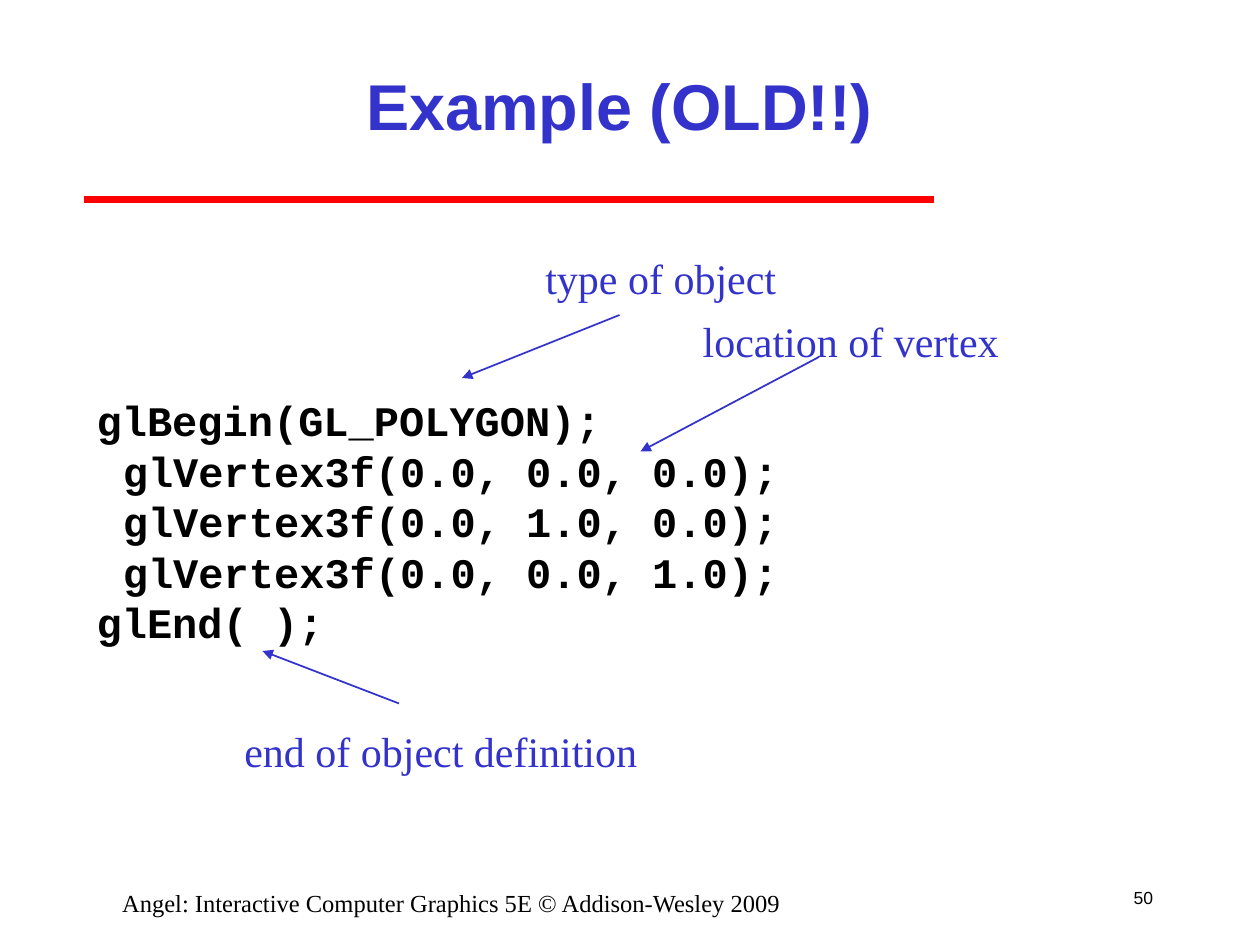
from lxml import etree
from pptx import Presentation
from pptx.dml.color import RGBColor
from pptx.enum import shapes, text
from pptx.oxml import ns
from pptx.util import Pt

COLORS = {"accent": "3333CC", "rule": "FF0000", "ink": "000000"}
CODE = [
    "glBegin(GL_POLYGON);",
    "\tglVertex3f(0.0, 0.0, 0.0);",
    "\tglVertex3f(0.0, 1.0, 0.0);",
    "\tglVertex3f(0.0, 0.0, 1.0);",
    "glEnd( );",
]
CALLOUTS = [
    ("type of object", (256.5, -81, 148, 36), (306, -42), (216, -6)),
    ("location of vertex", (346.5, -45, 185, 36), (420, -18), (318, 36)),
    ("end of object definition", (84.5, 189, 240, 36), (180, 180), (102, 150)),
]


def style(paragraph, face, size, color, bold=False, align=text.PP_ALIGN.LEFT):
    paragraph.alignment = align
    font = paragraph.font
    font.name, font.size, font.bold = face, Pt(size), bold
    font.color.rgb = RGBColor.from_string(COLORS[color])


def place(placeholder, box):
    placeholder.left, placeholder.top, placeholder.width, placeholder.height = map(Pt, box)
    placeholder.text_frame.auto_size = text.MSO_AUTO_SIZE.NONE
    return placeholder.text_frame


def add_label(slide, box, words, face, size, color, align=text.PP_ALIGN.LEFT, wrap=False):
    frame = slide.shapes.add_textbox(*map(Pt, box)).text_frame
    frame.word_wrap = wrap
    frame.text = words
    style(frame.paragraphs[0], face, size, color, align=align)
    return frame


def add_line(slide, start, end, color, width, arrow=False):
    line = slide.shapes.add_connector(shapes.MSO_CONNECTOR.STRAIGHT, *map(Pt, start + end))
    line.line.color.rgb = RGBColor.from_string(COLORS[color])
    line.line.width = Pt(width)
    if arrow:
        etree.SubElement(line.line._get_or_add_ln(), ns.qn("a:tailEnd"), type="triangle")
    etree.SubElement(line._element.spPr, ns.qn("a:effectLst"))


def add_heading(slide, box):
    left, top, width, height = box
    add_line(slide, (left, top + height), (left + 486, top + height), "rule", 4)
    frame = place(slide.shapes.title, (left + 60, top, width - 120, 84))
    frame.vertical_anchor = text.MSO_ANCHOR.MIDDLE
    frame.text = "Example (OLD!!)"
    style(frame.paragraphs[0], "Arial", 37, "accent", True, text.PP_ALIGN.CENTER)


def add_code(slide, box):
    frame = place(slide.placeholders[1], box)
    frame.text = "\n".join(CODE)
    for paragraph in frame.paragraphs:
        properties = paragraph._p.get_or_add_pPr()
        properties.set("marL", str(Pt(15)))
        properties.set("indent", str(-Pt(15)))
        etree.SubElement(properties, ns.qn("a:buNone"))
        paragraph.space_before = Pt(0)
        style(paragraph, "Courier New", 24, "ink", True)


def add_callouts(slide, box):
    left, top = box[:2]
    for words, (x, y, width, height), start, end in CALLOUTS:
        label = add_label(slide, (left + x, top + y, width, height), words,
                          "Times New Roman", 24, "accent")
        label.auto_size = text.MSO_AUTO_SIZE.SHAPE_TO_FIT_TEXT
        add_line(slide, (left + start[0], top + start[1]),
                 (left + end[0], top + end[1]), "accent", 1, arrow=True)


def add_footer(slide, box):
    left, top, width, height = box
    add_label(slide, (left, top + 6, 444, 18),
              "Angel: Interactive Computer Graphics 5E © Addison-Wesley 2009",
              "Times New Roman", 14, "ink", text.PP_ALIGN.CENTER, wrap=True)
    number = add_label(slide, (left + width - 30, top, 30, height), "50",
                       "Arial", 10, "ink", text.PP_ALIGN.RIGHT)
    number.vertical_anchor = text.MSO_ANCHOR.MIDDLE


def main():
    deck = Presentation()
    deck.slide_width, deck.slide_height = Pt(720), Pt(540)
    slide = deck.slides.add_slide(deck.slide_layouts[1])
    code_box = (48, 222, 612, 168)
    add_heading(slide, (48, 18, 612, 96))
    add_code(slide, code_box)
    add_callouts(slide, code_box)
    add_footer(slide, (36, 498, 630, 30))
    deck.save("out.pptx")


if __name__ == "__main__":
    main()
